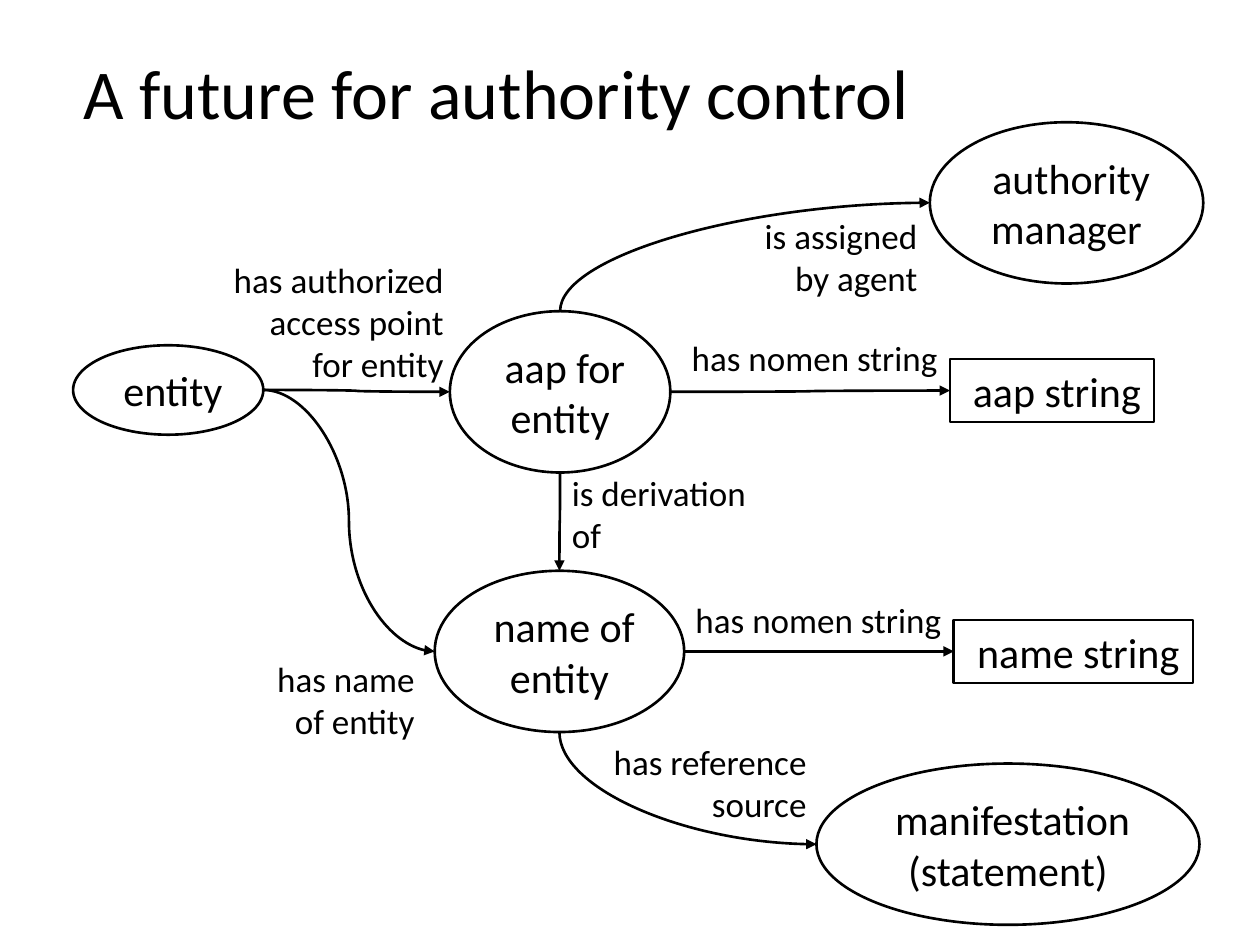
from dataclasses import dataclass

from lxml import etree
from pptx import Presentation
from pptx.dml.color import RGBColor
from pptx.enum.shapes import MSO_CONNECTOR, MSO_SHAPE
from pptx.enum.text import MSO_ANCHOR, MSO_AUTO_SIZE, PP_ALIGN
from pptx.oxml.ns import qn
from pptx.util import Inches, Pt

CURVE = MSO_CONNECTOR.CURVE
ELLIPSE, RECTANGLE = MSO_SHAPE.OVAL, MSO_SHAPE.RECTANGLE
MIDDLE, TOP = MSO_ANCHOR.MIDDLE, MSO_ANCHOR.TOP
FIT_SHAPE = MSO_AUTO_SIZE.SHAPE_TO_FIT_TEXT
LEFT, CENTER, RIGHT = PP_ALIGN.LEFT, PP_ALIGN.CENTER, PP_ALIGN.RIGHT
TITLE_ONLY = 5


@dataclass(frozen=True)
class Theme:
    """Colours, font and sizes of the slide."""
    ink: RGBColor = RGBColor(0, 0, 0)
    font: str = "Calibri"
    title_size: int = 40
    node_size: int = 24
    label_size: int = 20
    line_width: float = 1.5


THEME = Theme()

TITLE_BOX = (0.56, 0.34, 6.82, 0.77)

NODES = {
    "entity": (ELLIPSE, (0.58, 2.74, 1.51, 0.71), [" entity"]),
    "access point": (ELLIPSE, (3.57, 2.47, 1.75, 1.28), [" aap for", "entity"]),
    "access point string": (RECTANGLE, (7.54, 2.85, 1.62, 0.5), [" aap string"]),
    "name": (ELLIPSE, (3.45, 4.53, 1.98, 1.28), [" name of", "entity"]),
    "name string": (RECTANGLE, (7.57, 4.92, 1.9, 0.5), [" name string"]),
    "manifestation": (ELLIPSE, (6.48, 6.06, 3.04, 1.28), [" manifestation", "(statement)"]),
    "manager": (ELLIPSE, (7.38, 0.97, 2.17, 1.28), [" authority", "manager"]),
}

RELATIONS = [
    ("entity", "right", "access point", "left"),
    ("access point", "right", "access point string", "left"),
    ("entity", "right", "name", "left"),
    ("name", "right", "name string", "left"),
    ("access point", "bottom", "name", "top"),
    ("name", "bottom", "manifestation", "left"),
    ("access point", "top", "manager", "left"),
]

LABELS = [
    ((1.74, 2, 1.88, 1.11), RIGHT, ["has authorized", "access point", "for entity"]),
    ((5.37, 2.62, 2.17, 0.44), RIGHT, ["has nomen string"]),
    ((5.4, 4.7, 2.17, 0.44), RIGHT, ["has nomen string"]),
    ((4.44, 3.69, 1.6, 0.77), LEFT, ["is derivation", "of"]),
    ((4.75, 5.83, 1.75, 0.77), RIGHT, ["has reference", "source"]),
    ((2.09, 5.17, 1.3, 0.77), RIGHT, ["has name", "of entity"]),
    ((5.95, 1.65, 1.43, 0.77), RIGHT, ["is assigned", "by agent"]),
]


def write_lines(shape, lines, size, alignment, anchor):
    """Write one paragraph per line into a shape that fits its text."""
    frame = shape.text_frame
    frame.word_wrap = False
    frame.auto_size = FIT_SHAPE
    frame.vertical_anchor = anchor
    for index, line in enumerate(lines):
        paragraph = frame.add_paragraph() if index else frame.paragraphs[0]
        paragraph.alignment = alignment
        run = paragraph.add_run()
        run.text = line
        run.font.name = THEME.font
        run.font.size = Pt(size)
        run.font.color.rgb = THEME.ink


def style_line(line):
    """Give an outline or connector the diagram's line."""
    line.color.rgb = THEME.ink
    line.width = Pt(THEME.line_width)


def add_title(slide, box):
    """Place the slide title in its box."""
    title = slide.shapes.title
    title.left, title.top, title.width, title.height = map(Inches, box)
    write_lines(title, ["A future for authority control"], THEME.title_size, LEFT, TOP)


def add_node(slide, kind, box, lines):
    """Add an outlined node with centred text."""
    node = slide.shapes.add_shape(kind, *map(Inches, box))
    node.shadow.inherit = False
    node.fill.background()
    style_line(node.line)
    write_lines(node, lines, THEME.node_size, CENTER, MIDDLE)


def add_label(slide, box, alignment, lines):
    """Add the wording of a relation."""
    label = slide.shapes.add_textbox(*map(Inches, box))
    write_lines(label, lines, THEME.label_size, alignment, TOP)


def side_point(box, side):
    """Return the middle of one side of a box."""
    left, top, width, height = box
    return {
        "left": (left, top + height / 2),
        "right": (left + width, top + height / 2),
        "top": (left + width / 2, top),
        "bottom": (left + width / 2, top + height),
    }[side]


def add_relation(slide, start_box, start_side, end_box, end_side):
    """Draw a curved arrow, turned a quarter when it leaves vertically."""
    start_x, start_y = side_point(start_box, start_side)
    end_x, end_y = side_point(end_box, end_side)
    vertical_start = start_side in ("top", "bottom")
    ends = (start_x, start_y, end_x, end_y)
    if vertical_start:
        center_x, center_y = (start_x + end_x) / 2, (start_y + end_y) / 2
        half_x, half_y = (end_x - start_x) / 2, (end_y - start_y) / 2
        ends = (center_x - half_y, center_y + half_x, center_x + half_y, center_y - half_x)
    connector = slide.shapes.add_connector(CURVE, *map(Inches, ends))
    style_line(connector.line)
    properties = connector._element.spPr
    if vertical_start:
        properties.find(qn("a:xfrm")).set("rot", str(90 * 60000))
        if end_side == "left":
            properties.find(qn("a:prstGeom")).set("prst", "curvedConnector2")
    line = properties.find(qn("a:ln"))
    etree.SubElement(line, qn("a:tailEnd"), type="triangle", w="med", len="med")
    etree.SubElement(properties, qn("a:effectLst"))


def add_diagram(slide):
    """Add the nodes, their relations and the wording of the relations."""
    for kind, box, lines in NODES.values():
        add_node(slide, kind, box, lines)
    for start, start_side, end, end_side in RELATIONS:
        add_relation(slide, NODES[start][1], start_side, NODES[end][1], end_side)
    for box, alignment, lines in LABELS:
        add_label(slide, box, alignment, lines)


def main():
    """Build and save the presentation."""
    presentation = Presentation()
    presentation.slide_width, presentation.slide_height = Inches(10), Inches(7.5)
    slide = presentation.slides.add_slide(presentation.slide_layouts[TITLE_ONLY])
    add_title(slide, TITLE_BOX)
    add_diagram(slide)
    presentation.save("out.pptx")


if __name__ == "__main__":
    main()
